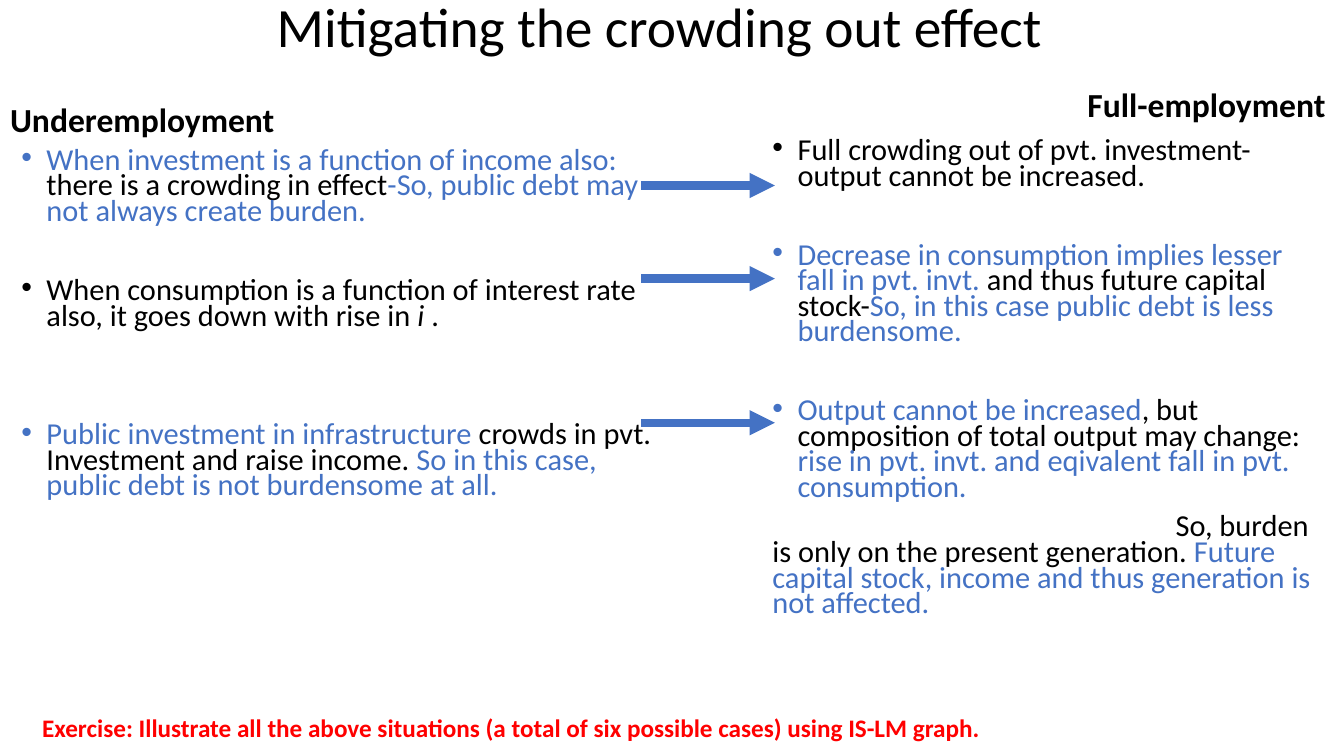
from lxml import etree
from pptx import Presentation
from pptx.dml.color import RGBColor
from pptx.enum.shapes import MSO_CONNECTOR as Connector
from pptx.enum.text import MSO_ANCHOR as Anchor, MSO_AUTO_SIZE as AutoSize, PP_ALIGN as Align
from pptx.oxml.ns import qn
from pptx.util import Pt

BLACK, BLUE, RED = "000000", "4472C4", "FF0000"
HANGING = 18


def rgb(value):
    return RGBColor.from_string(value)


class SlideBuilder:
    font = "Calibri"
    body_size = 21.7
    space_before = 10

    def __init__(self, presentation):
        comparison = presentation.slide_layouts[4]
        self.slide = presentation.slides.add_slide(comparison)

    def format_run(self, run, size, color, bold=False, italic=False):
        run.font.name = self.font
        run.font.size = Pt(size)
        run.font.color.rgb = rgb(color)
        run.font.bold = bold
        run.font.italic = italic

    def placeholder(self, idx, box, anchor):
        holder = self.slide.placeholders[idx]
        holder.left, holder.top, holder.width, holder.height = map(Pt, box)
        frame = holder.text_frame
        frame.word_wrap = True
        frame.auto_size = AutoSize.NONE
        frame.vertical_anchor = anchor
        return frame

    def heading(self, idx, box, text, size, align, anchor, bold=False, space=0):
        frame = self.placeholder(idx, box, anchor)
        frame.text = text
        paragraph = frame.paragraphs[0]
        paragraph.alignment = align
        paragraph.line_spacing = 0.9
        paragraph.space_before = Pt(space)
        self.format_run(paragraph.runs[0], size, BLACK, bold)

    def points(self, idx, box, items):
        """Fill a body with items of (extra space above, first-line indent, parts)."""
        frame = self.placeholder(idx, box, Anchor.TOP)
        for number, (gap, indent, parts) in enumerate(items):
            paragraph = frame.add_paragraph() if number else frame.paragraphs[0]
            paragraph.line_spacing = 0.7
            paragraph.space_before = Pt(self.space_before + gap)
            self.bullet(paragraph, indent)
            for text, color, *italic in parts:
                run = paragraph.add_run()
                run.text = text
                self.format_run(run, self.body_size, color, italic=bool(italic))

    def bullet(self, paragraph, indent):
        """Hang a bullet on a negative indent; otherwise indent the first line only."""
        properties = paragraph._p.get_or_add_pPr()
        properties.set("marL", str(Pt(max(-indent, 0))))
        properties.set("indent", str(Pt(indent)))
        if indent < 0:
            etree.SubElement(properties, qn("a:buFont")).set("typeface", "Arial")
            etree.SubElement(properties, qn("a:buChar")).set("char", "•")
        else:
            etree.SubElement(properties, qn("a:buNone"))

    def arrow(self, start, end, y):
        link = self.slide.shapes.add_connector(
            Connector.STRAIGHT, Pt(start), Pt(y), Pt(end), Pt(y))
        link.line.color.rgb = rgb(BLUE)
        link.line.width = Pt(6)
        etree.SubElement(link.line._get_or_add_ln(), qn("a:tailEnd")).set("type", "triangle")
        etree.SubElement(link._element.spPr, qn("a:effectLst"))

    def note(self, box, text, size, color):
        frame = self.slide.shapes.add_textbox(*map(Pt, box)).text_frame
        frame.word_wrap = True
        frame.text = text
        self.format_run(frame.paragraphs[0].runs[0], size, color, bold=True)


def main():
    presentation = Presentation()
    presentation.slide_width, presentation.slide_height = Pt(960), Pt(540)
    builder = SlideBuilder(presentation)
    one_line = 28.3  # a line of body text and the space above it

    builder.heading(0, (57, 3, 828, 36), "Mitigating the crowding out effect",
                    39.6, Align.CENTER, Anchor.MIDDLE)
    builder.heading(1, (0, 67.5, 406, 36), "Underemployment",
                    24, Align.LEFT, Anchor.BOTTOM, bold=True, space=10)
    builder.heading(3, (551.5, 57, 408, 36), "Full-employment ",
                    24, Align.RIGHT, Anchor.BOTTOM, bold=True, space=10)

    underemployment = [
        (0, -HANGING, [
            ("When investment is a function of income also: ", BLUE),
            ("there is a crowding in effect", BLACK),
            ("-So, public debt may not always create burden.", BLUE)]),
        (one_line, -HANGING, [
            ("When consumption is a function of interest rate also, "
             "it goes down with rise in ", BLACK),
            ("i", BLACK, "italic"),
            (" .", BLACK)]),
        (2 * one_line, -HANGING, [
            ("Public investment in infrastructure ", BLUE),
            ("crowds in pvt. Investment and raise income. ", BLACK),
            ("So in this case, public debt is not burdensome at all.", BLUE)]),
    ]
    full_employment = [
        (0, -HANGING, [
            ("Full crowding out of pvt. investment-output cannot be increased.", BLACK)]),
        (one_line, -HANGING, [
            ("Decrease in consumption implies lesser fall in pvt. invt. ", BLUE),
            ("and thus future capital stock-", BLACK),
            ("So, in this case public debt is less burdensome.", BLUE)]),
        (one_line, -HANGING, [
            ("Output cannot be increased", BLUE),
            (", but composition of total output may change: ", BLACK),
            ("rise in pvt. invt. and eqivalent fall in pvt. consumption.", BLUE)]),
        (0, 288, [
            ("So, burden is only on the present generation. ", BLACK),
            ("Future capital stock, income and thus generation is not affected.", BLUE)]),
    ]
    builder.points(2, (8, 103.5, 472, 290), underemployment)
    builder.points(4, (544.5, 96.5, 408, 358.5), full_employment)

    for y in (132.5, 199, 302):
        builder.arrow(458, 553.5, y)

    builder.note((23, 505.5, 921.5, 29),
                 "Exercise: Illustrate all the above situations "
                 "(a total of six possible cases) using IS-LM graph.", 18, RED)
    presentation.save("out.pptx")


if __name__ == "__main__":
    main()
